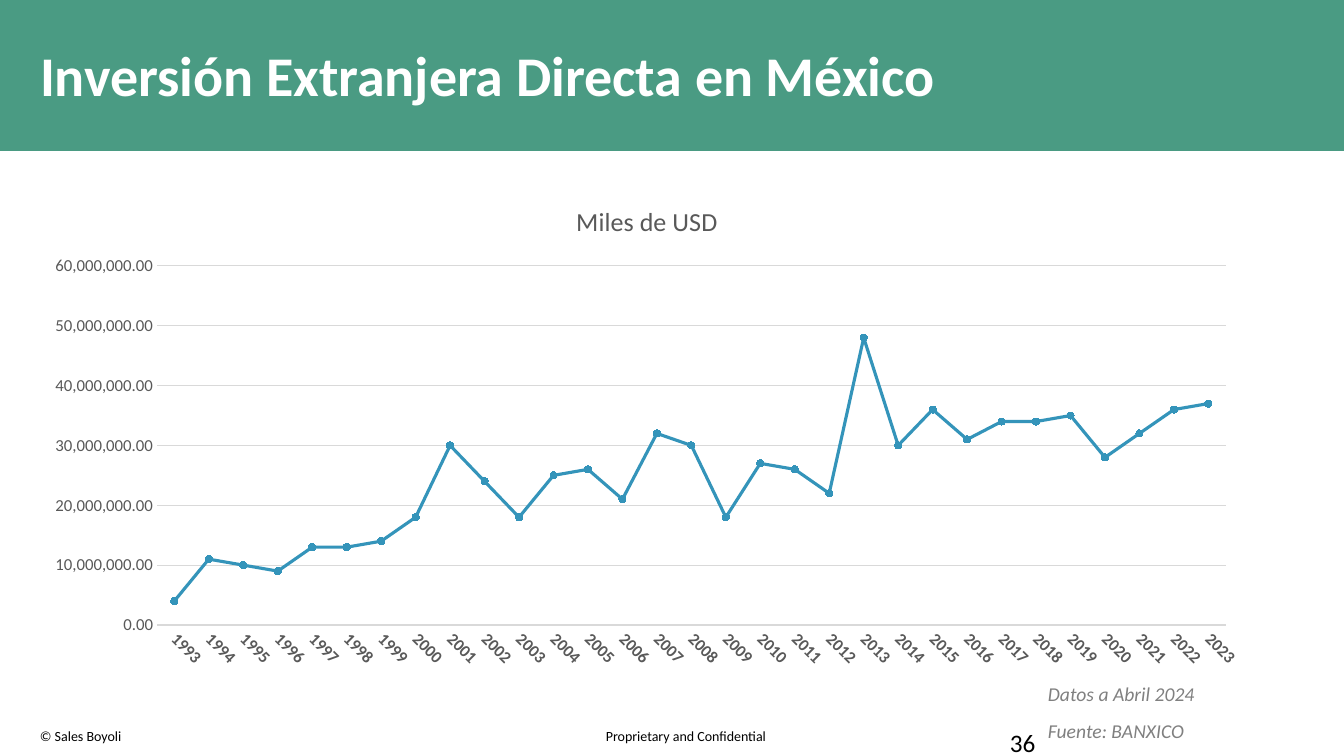
import pptx
import pptx.util
import pptx.dml.color
import pptx.chart.data
import pptx.enum.chart
import pptx.enum.shapes
import pptx.enum.text
import pptx.oxml
import pptx.oxml.ns

PX = 914400 / 100.8
THEME = {
    "font": "Calibri", "band": "4A9B83", "line": "3494BA", "white": "FFFFFF",
    "black": "000000", "gray": "808080", "label": "595959", "grid": "D9D9D9",
    "title": 40, "head": 18.6, "page": 18, "note": 14, "axis": 12, "foot": 10,
}


def px(*nums):
    return [pptx.util.Emu(round(n * PX)) for n in nums]


def style(text, font, size, color, bold=False, italic=False, holder=None):
    """Format a font, and write the text in its holder if there is one."""
    if holder is not None:
        holder.text = text
        font = holder.paragraphs[0].runs[0].font
    font.name = THEME["font"]
    font.size = pptx.util.Pt(THEME[size])
    font.bold, font.italic = bold, italic
    font.color.rgb = pptx.dml.color.RGBColor.from_string(THEME[color])


deck = pptx.Presentation()
deck.slide_width, deck.slide_height = px(1344, 756)
slide = deck.slides.add_slide(deck.slide_layouts[5])
shapes = slide.shapes

# Title band, behind the title
band = shapes.add_shape(pptx.enum.shapes.MSO_SHAPE.RECTANGLE, *px(0, 0, 1344, 151))
band.shadow.inherit = False
band.fill.solid()
band.fill.fore_color.rgb = pptx.dml.color.RGBColor.from_string(THEME["band"])
band.line.fill.background()
shapes._spTree.insert(2, band._element)

# Title
title = shapes.title
title.left, title.top, title.width, title.height = px(30, 14, 1282, 128)
frame = title.text_frame
style("Inversión Extranjera Directa en México", None, "title", "white",
      bold=True, holder=frame)
frame.word_wrap = True
frame.auto_size = pptx.enum.text.MSO_AUTO_SIZE.NONE
frame.vertical_anchor = pptx.enum.text.MSO_ANCHOR.MIDDLE
frame.paragraphs[0].alignment = pptx.enum.text.PP_ALIGN.LEFT
frame.paragraphs[0].line_spacing = 0.9

# Chart data, in millions
flows = [4, 11, 10, 9, 13, 13, 14, 18, 30, 24, 18, 25, 26, 21, 32, 30,
         18, 27, 26, 22, 48, 30, 36, 31, 34, 34, 35, 28, 32, 36, 37]
data = pptx.chart.data.CategoryChartData(number_format="#,##0.00")
data.categories = [str(1993 + i) for i in range(len(flows))]
data.add_series("Miles de USD", [v * 1000000 for v in flows])
chart = shapes.add_chart(pptx.enum.chart.XL_CHART_TYPE.LINE_MARKERS,
                         *px(30, 183, 1234, 494), data).chart
chart.has_legend = False
style("", chart.font, "foot", "black")
chart.has_title = True
style("Miles de USD", None, "head", "label", holder=chart.chart_title.text_frame)
chart.chart_title.include_in_layout = False

# Plot area as shares of the chart
area = chart._chartSpace.chart.plotArea
for old in area.findall(pptx.oxml.ns.qn("c:layout")):
    area.remove(old)
spots = "".join(f'<c:{k} val="{v}"/>' for k, v in
                [("x", 0.103), ("y", 0.168), ("w", 0.866), ("h", 0.727)])
area.insert(0, pptx.oxml.parse_xml(
    f'<c:layout {pptx.oxml.ns.nsdecls("c")}><c:manualLayout>'
    '<c:layoutTarget val="inner"/><c:xMode val="edge"/><c:yMode val="edge"/>'
    f'{spots}</c:manualLayout></c:layout>'))

# Axes
years, sums = chart.category_axis, chart.value_axis
for axis in (years, sums):
    axis.major_tick_mark = axis.minor_tick_mark = pptx.enum.chart.XL_TICK_MARK.NONE
    style("", axis.tick_labels.font, "axis", "label", bold=axis is years)
sums.minimum_scale, sums.maximum_scale, sums.major_unit = 0, 60000000, 10000000
sums.tick_labels.number_format = "#,##0.00"
sums.tick_labels.number_format_is_linked = False
sums.format.line.fill.background()
turn = years._element.find(pptx.oxml.ns.qn("c:txPr")).find(pptx.oxml.ns.qn("a:bodyPr"))
turn.set("rot", "2700000")
turn.set("vert", "horz")

# Series
plot = chart.plots[0]
plot.vary_by_categories = False
flow = plot.series[0]
flow.smooth = False
flow.marker.style = pptx.enum.chart.XL_MARKER_STYLE.CIRCLE
flow.marker.size = 5
flow.marker.format.fill.solid()
flow.marker.format.fill.fore_color.rgb = pptx.dml.color.RGBColor.from_string(THEME["line"])
for line, color, width in [
    (years.format.line, "grid", 0.75),
    (sums.major_gridlines.format.line, "grid", 0.75),
    (flow.format.line, "line", 2.25),
    (flow.marker.format.line, "line", 0.75),
]:
    line.color.rgb = pptx.dml.color.RGBColor.from_string(THEME[color])
    line.width = pptx.util.Pt(width)

# Footer and source notes
for text, place, size, color, wrap in [
    ("Proprietary and Confidential", (596, 723, 182, 27), "foot", "black", False),
    ("© Sales Boyoli", (30, 723, 340, 27), "foot", "black", True),
    ("36", (1000, 722, 313, 25), "page", "black", True),
    ("Datos a Abril 2024", (1038, 677, 285, 34), "note", "gray", True),
    ("Fuente: BANXICO", (1038, 714, 285, 34), "note", "gray", True),
]:
    frame = shapes.add_textbox(*px(*place)).text_frame
    frame.word_wrap = wrap
    style(text, None, size, color, italic=size == "note", holder=frame)

deck.save("out.pptx")
